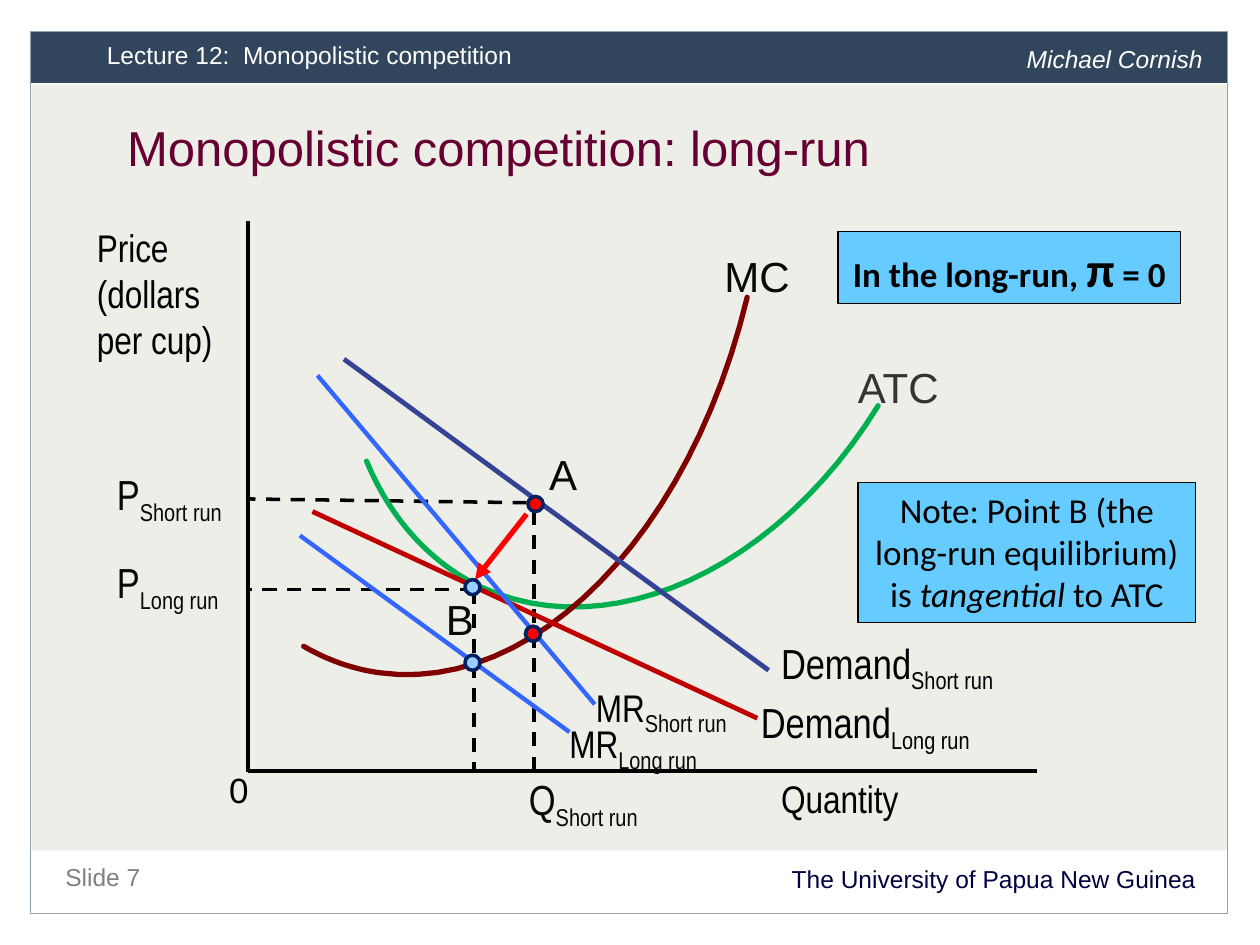
"""Builds a lecture slide on long-run equilibrium under monopolistic competition."""
from dataclasses import dataclass

import pptx
import pptx.dml.color
import pptx.enum.dml
import pptx.enum.shapes
import pptx.enum.text
import pptx.oxml.ns
import pptx.util
from lxml import etree

Inches = pptx.util.Inches
Pt = pptx.util.Pt
MSO_SHAPE = pptx.enum.shapes.MSO_SHAPE
PP_ALIGN = pptx.enum.text.PP_ALIGN


@dataclass(frozen=True)
class Theme:
    sans: str = "Arial"
    narrow: str = "Arial Narrow"
    note: str = "Calibri"
    title_size: int = 28
    label_size: int = 24
    axis_size: int = 22
    note_size: int = 20
    small_size: int = 14
    black: str = "000000"
    ink: str = "080808"
    white: str = "FFFFFF"
    grey: str = "808080"
    atc_ink: str = "333333"
    navy: str = "000041"
    maroon: str = "660033"
    panel: str = "EDEEE8"
    header: str = "31465C"
    frame: str = "91A1B0"
    note_fill: str = "66CCFF"
    atc: str = "00B050"
    mc: str = "800000"
    demand_short: str = "364395"
    demand_long: str = "C00000"
    mr: str = "3366FF"
    red: str = "FF0000"
    pale: str = "99CCFF"
    ring: str = "002060"


T = Theme()

GUIDES = [
    ((3.76, 4.68), (3.76, 6.12)),
    ((3.76, 4.68), (1.95, 4.68)),
    ((4.24, 6.12), (4.24, 3.99)),
    ((4.18, 3.99), (1.97, 3.96)),
]
CURVES = [
    (T.atc, [(6.97, 3.22), (6.17, 4.52), (4.84, 5.13), (3.82, 4.66),
             (3.42, 4.47), (3.1, 4.12), (2.91, 3.66)]),
    (T.mc, [(5.93, 2.36), (5.48, 4.24), (4.24, 5.51), (3.01, 5.34),
            (2.8, 5.31), (2.6, 5.24), (2.41, 5.13)]),
]
LINES = [
    ((2.48, 4.06), (6.01, 5.7), T.demand_long, 2.75),
    ((1.97, 1.75), (1.97, 6.13), T.black, 2.5),
    ((1.97, 6.12), (8.23, 6.12), T.black, 2.5),
    ((2.73, 2.85), (6.1, 5.32), T.demand_short, 2.75),
    ((2.52, 2.98), (4.72, 5.59), T.mr, 2.5),
    ((2.38, 4.25), (4.52, 5.81), T.mr, 2.5),
]
POINTS = [(4.19, 3.94, T.red), (3.69, 4.6, T.pale),
          (4.17, 4.97, T.red), (3.69, 5.2, T.pale)]
LABELS = [
    ((5.65, 1.94, 1, 0.42), "MC", T.sans, T.label_size, T.ink),
    ((6.71, 2.82, 1, 0.42), "ATC", T.sans, T.label_size, T.atc_ink),
    ((4.26, 3.51, 0.34, 0.42), "A", T.sans, T.label_size, T.ink),
    ((3.44, 4.66, 0.34, 0.42), "B", T.sans, T.label_size, T.ink),
    ((1.72, 6.05, 0.25, 0.36), "0", T.sans, T.note_size, T.black),
    ((0.67, 1.73, 1.41, 0.7), "Price (dollars per cup)", T.narrow, T.axis_size, T.black),
    ((6.1, 6.1, 2.55, 0.47), "Quantity", T.narrow, T.axis_size, T.black),
]
SUB_LABELS = [
    ((6.1, 5.01, 2.31, 0.5), "Demand", "Short run", T.label_size, T.black),
    ((5.94, 5.48, 2.31, 0.5), "Demand", "Long run", T.label_size, T.black),
    ((4.63, 5.35, 1.58, 0.47), "MR", "Short run", T.axis_size, T.black),
    ((4.42, 5.64, 1.33, 0.47), "MR", "Long run", T.axis_size, T.black),
    ((0.83, 3.67, 1.33, 0.5), "P", "Short run", T.label_size, T.ink),
    ((0.83, 4.37, 1.37, 0.5), "P", "Long run", T.label_size, T.ink),
    ((4.1, 6.09, 1.26, 0.5), "Q", "Short run", T.label_size, T.ink),
]


def rgb(value):
    """Turn a hex string into a colour."""
    return pptx.dml.color.RGBColor.from_string(value)


def add_run(p, text, font, size, color, bold=False, italic=False, subscript=False):
    """Append one formatted run to a paragraph."""
    r = p.add_run()
    r.text = text
    r.font.name, r.font.size = font, Pt(size)
    r.font.color.rgb = rgb(color)
    r.font.bold, r.font.italic = bold, italic
    if subscript:
        r._r.get_or_add_rPr().set("baseline", "-25000")


def set_frame(sp, align=PP_ALIGN.LEFT, leading=None):
    """Make a text frame wrap from the top and return its first paragraph."""
    tf = sp.text_frame
    tf.word_wrap = True
    tf.vertical_anchor = pptx.enum.text.MSO_ANCHOR.TOP
    p = tf.paragraphs[0]
    p.alignment = align
    if leading:
        p.line_spacing = Pt(leading)
    return p


def add_text(s, box, align=PP_ALIGN.LEFT, leading=None):
    """Add a text box and return its first paragraph."""
    return set_frame(s.shapes.add_textbox(*map(Inches, box)), align, leading)


def add_box(s, kind, box, fill=None, line=None, width=0.75):
    """Add a preset shape with an optional fill and outline."""
    sp = s.shapes.add_shape(kind, *map(Inches, box))
    sp.shadow.inherit = False
    if fill:
        sp.fill.solid()
        sp.fill.fore_color.rgb = rgb(fill)
    else:
        sp.fill.background()
    if line:
        sp.line.color.rgb = rgb(line)
        sp.line.width = Pt(width)
    else:
        sp.line.fill.background()
    return sp


def add_line(s, start, end, color, width, dashed=False, arrow=False):
    """Add a straight connector, dashed or with an arrowhead if asked."""
    cx = s.shapes.add_connector(pptx.enum.shapes.MSO_CONNECTOR.STRAIGHT,
                                *map(Inches, start + end))
    cx.line.color.rgb = rgb(color)
    cx.line.width = Pt(width)
    if dashed:
        cx.line.dash_style = pptx.enum.dml.MSO_LINE.DASH
    if arrow:
        etree.SubElement(cx.line._get_or_add_ln(),
                         pptx.oxml.ns.qn("a:tailEnd"), type="triangle")
    etree.SubElement(cx._element.spPr, pptx.oxml.ns.qn("a:effectLst"))


def bezier(a, b, c, d, t):
    """Return the point at t on a cubic curve."""
    u = 1 - t
    return tuple(Inches(u**3 * i + 3 * u * u * t * j + 3 * u * t * t * k + t**3 * m)
                 for i, j, k, m in zip(a, b, c, d))


def add_curve(s, color, knots, steps=24):
    """Draw chained cubic curves as one open outline."""
    points = [bezier(*knots[i:i + 4], n / steps)
              for i in range(0, len(knots) - 1, 3) for n in range(1, steps + 1)]
    fb = s.shapes.build_freeform(*map(Inches, knots[0]))
    fb.add_line_segments(points, close=False)
    sp = fb.convert_to_shape()
    sp.shadow.inherit = False
    sp.fill.background()
    sp.line.color.rgb = rgb(color)
    sp.line.width = Pt(3)
    sp.line._get_or_add_ln().set("cap", "rnd")


def add_frame(s):
    """Add the panel, header band, footer and outer frame."""
    add_box(s, MSO_SHAPE.RECTANGLE, (0.25, 0.67, 9.5, 6.08), T.panel)
    add_box(s, MSO_SHAPE.RECTANGLE, (0.24, 0.24, 9.5, 0.42), T.header, T.white, 0.5)
    add_box(s, MSO_SHAPE.RECTANGLE, (0.24, 0.25, 9.5, 7), line=T.frame)
    for box, text, color, leading, align, italic in [
        ((0.42, 6.83, 9.17, 0.32), "The University of Papua New Guinea", T.navy, 15, PP_ALIGN.RIGHT, False),
        ((0.42, 6.75, 4.33, 0.34), "Slide 7", T.grey, 20, PP_ALIGN.LEFT, False),
        ((0.75, 0.25, 6.13, 0.37), "Lecture 12:  Monopolistic competition", T.white, 18, PP_ALIGN.LEFT, False),
        ((8.05, 0.28, 1.64, 0.37), "Michael Cornish", T.white, 18, PP_ALIGN.LEFT, True),
    ]:
        add_run(add_text(s, box, align, leading), text, T.sans, T.small_size, color, italic=italic)


def add_title(s, text):
    """Fill the title placeholder and bring it in front of the panel."""
    sp = s.shapes.title
    s.shapes._spTree.append(sp._element)
    sp.left, sp.top, sp.width, sp.height = map(Inches, (0.91, 0.99, 8.13, 0.75))
    add_run(set_frame(sp, leading=26), text, T.sans, T.title_size, T.maroon)


def add_diagram(s):
    """Draw the axes, cost and demand curves, points and labels."""
    for start, end in GUIDES:
        add_line(s, start, end, T.black, 2, dashed=True)
    for color, knots in CURVES:
        add_curve(s, color, knots)
    for line in LINES:
        add_line(s, *line)
    add_line(s, (4.18, 4.08), (3.77, 4.6), T.red, 3, arrow=True)
    for x, y, fill in POINTS:
        add_box(s, MSO_SHAPE.OVAL, (x, y, 0.12, 0.12), fill, T.ring, 2)
    for box, *style in LABELS:
        add_run(add_text(s, box), *style)
    for box, name, period, size, color in SUB_LABELS:
        p = add_text(s, box)
        add_run(p, name, T.narrow, size, color)
        add_run(p, period, T.narrow, T.label_size, T.ink if name == "MR" else color, subscript=True)


def add_note(s, box, runs, bold=False):
    """Add a blue note box from (text, size, italic) runs."""
    sp = add_box(s, MSO_SHAPE.RECTANGLE, box, T.note_fill, T.black)
    p = set_frame(sp, PP_ALIGN.CENTER)
    for text, size, italic in runs:
        add_run(p, text, T.note, size, T.black, bold, italic)


def main():
    """Build and save the slide."""
    prs = pptx.Presentation()
    prs.slide_width, prs.slide_height = Inches(10), Inches(7.5)
    s = prs.slides.add_slide(prs.slide_layouts[5])
    add_frame(s)
    add_title(s, "Monopolistic competition: long-run")
    add_diagram(s)
    add_note(s, (6.65, 1.84, 2.72, 0.57),
             [("In the long-run, ", T.note_size, False), ("π", T.title_size, False),
              (" = 0", T.note_size, False)], bold=True)
    add_note(s, (6.81, 3.83, 2.68, 1.11),
             [("Note: Point B (the long-run equilibrium) is ", T.note_size, False),
              ("tangential", T.note_size, True), (" to ATC", T.note_size, False)])
    prs.save("out.pptx")


if __name__ == "__main__":
    main()
